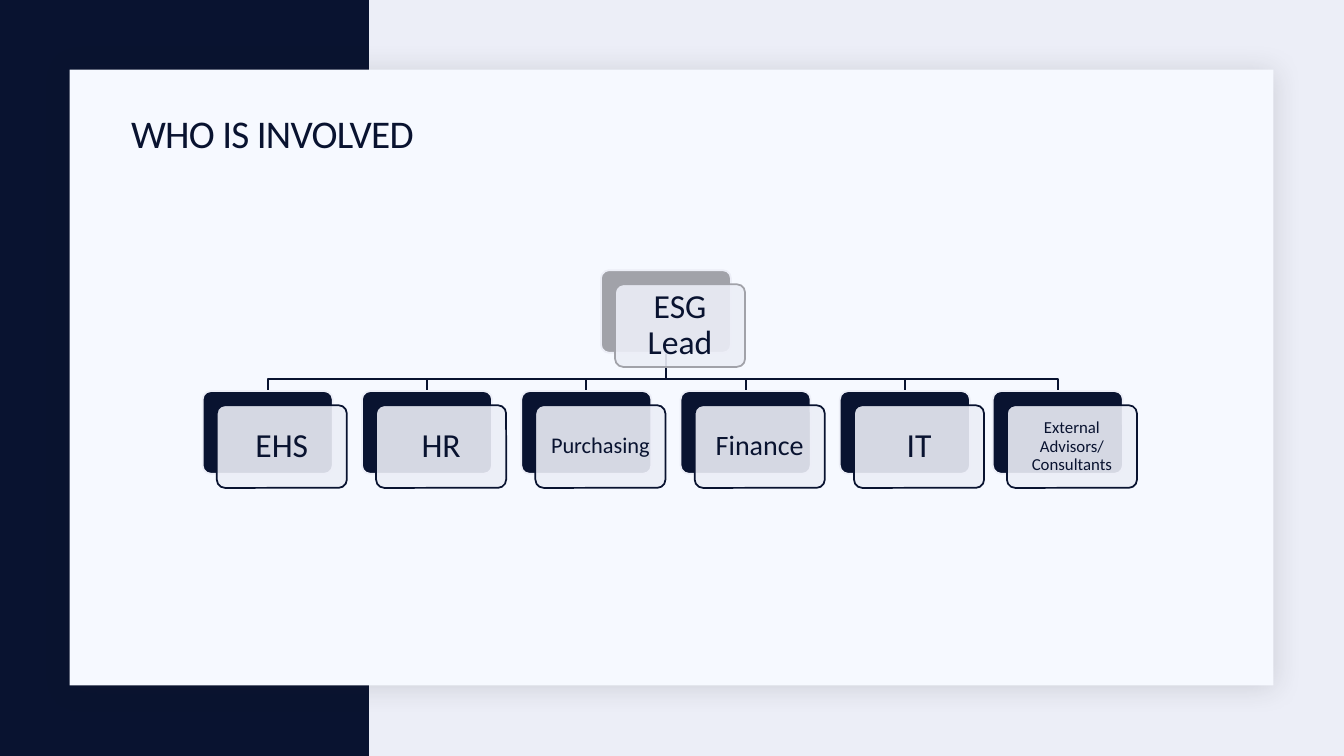
from dataclasses import dataclass

from lxml.etree import SubElement
from pptx import Presentation
from pptx.dml.color import RGBColor
from pptx.enum.shapes import MSO_SHAPE as Preset
from pptx.enum.text import MSO_ANCHOR as Anchor, MSO_AUTO_SIZE as AutoSize, PP_ALIGN as Align
from pptx.oxml.ns import qn
from pptx.util import Inches, Pt


@dataclass(frozen=True)
class Theme:
    font: str = "Calibri"
    navy: str = "091330"
    pale: str = "ECEEF7"
    panel: str = "F6F9FF"
    grey: str = "A1A2A9"
    shadow: str = "1F2125"
    title: float = 28
    large: float = 24
    medium: float = 20
    small: float = 16
    tiny: float = 12
    line: float = 1.25


@dataclass(frozen=True)
class Box:
    left: float
    top: float
    width: float
    height: float

    def emu(self) -> tuple:
        return tuple(Inches(v) for v in (self.left, self.top, self.width, self.height))

    def shifted(self, step: float) -> "Box":
        return Box(self.left + step, self.top + step, self.width, self.height)

    @property
    def center(self) -> float:
        return self.left + self.width / 2


@dataclass(frozen=True)
class Grid:
    left: float = 2.01
    top: float = 2.68
    column: float = 1.58
    row: float = 1.2
    card_width: float = 1.29
    card_height: float = 0.82
    offset: float = 0.14

    def cell(self, col: float, row: float) -> Box:
        return Box(self.left + col * self.column, self.top + row * self.row,
                   self.card_width, self.card_height)


@dataclass(frozen=True)
class Role:
    text: str
    col: float
    row: float
    size: float
    inset: float
    color: str


THEME = Theme()
GRID = Grid()
WIDTH, HEIGHT = 13.33, 7.5
BAND = Box(0, 0, 3.66, HEIGHT)
PANEL = Box(0.69, 0.69, 11.94, 6.11)
TITLE = Box(1.2, 1.03, 11, 0.64)

LEAD = Role("ESG Lead", 2.5, 0, THEME.large, 0.12, THEME.grey)
TEAM = [
    Role("EHS", 0, 1, THEME.large, 0.12, THEME.navy),
    Role("HR", 1, 1, THEME.large, 0.12, THEME.navy),
    Role("Purchasing", 2, 1, THEME.small, 0.09, THEME.navy),
    Role("Finance", 3, 1, THEME.medium, 0.1, THEME.navy),
    Role("IT", 4, 1, THEME.large, 0.12, THEME.navy),
    Role("External Advisors/ Consultants", 4.96, 1, THEME.tiny, 0.07, THEME.navy),
]


def rgb(color: str) -> RGBColor:
    return RGBColor.from_string(color)


def add_block(shapes, preset, box: Box, fill: str, line: str = ""):
    sp = shapes.add_shape(preset, *box.emu())
    sp.shadow.inherit = False
    sp.fill.solid()
    sp.fill.fore_color.rgb = rgb(fill)
    if line:
        sp.line.color.rgb = rgb(line)
        sp.line.width = Pt(THEME.line)
    else:
        sp.line.fill.background()
    return sp


def add_alpha(color_element, percent: int) -> None:
    SubElement(color_element, qn("a:alpha"), val=str(percent * 1000))


def add_soft_shadow(sp) -> None:
    effects = sp._element.spPr.find(qn("a:effectLst"))
    shadow = SubElement(effects, qn("a:outerShdw"), blurRad=str(Pt(20)), dist=str(Pt(2)),
                        dir=str(45 * 60000), algn="tl", rotWithShape="0")
    add_alpha(SubElement(shadow, qn("a:srgbClr"), val=THEME.shadow), 15)


def write(tf, text: str, size: float, align) -> None:
    tf.word_wrap = True
    tf.auto_size = AutoSize.NONE
    tf.vertical_anchor = Anchor.MIDDLE
    p = tf.paragraphs[0]
    p.text = text
    p.alignment = align
    p.line_spacing = 0.9
    p.font.name = THEME.font
    p.font.size = Pt(size)
    p.font.color.rgb = rgb(THEME.navy)


def add_title(slide) -> None:
    title = slide.shapes.title
    title.left, title.top, title.width, title.height = TITLE.emu()
    write(title.text_frame, "WHO IS INVOLVED", THEME.title, Align.LEFT)
    title.text_frame.paragraphs[0].runs[0].font._element.set("spc", "-50")
    slide.shapes._spTree.append(title._element)


def add_branch(shapes, parent: Box, child: Box) -> None:
    start = parent.top + parent.height
    bend = start + (child.top - start) * 0.68
    points = [(parent.center, bend), (child.center, bend), (child.center, child.top)]
    builder = shapes.build_freeform(Inches(parent.center), Inches(start))
    builder.add_line_segments([(Inches(x), Inches(y)) for x, y in points], close=False)
    sp = builder.convert_to_shape()
    sp.shadow.inherit = False
    sp.fill.background()
    sp.line.color.rgb = rgb(THEME.navy)
    sp.line.width = Pt(THEME.line)


def add_card(shapes, role: Role) -> None:
    box = GRID.cell(role.col, role.row)
    back = add_block(shapes, Preset.ROUNDED_RECTANGLE, box, role.color, THEME.pale)
    front = add_block(shapes, Preset.ROUNDED_RECTANGLE, box.shifted(GRID.offset),
                      THEME.pale, role.color)
    back.adjustments[0] = front.adjustments[0] = 0.1
    add_alpha(front._element.spPr.find(qn("a:solidFill"))[0], 90)
    tf = front.text_frame
    tf.margin_left = tf.margin_right = tf.margin_top = tf.margin_bottom = Inches(role.inset)
    write(tf, role.text, role.size, Align.CENTER)


def main() -> None:
    prs = Presentation()
    prs.slide_width, prs.slide_height = Inches(WIDTH), Inches(HEIGHT)
    slide = prs.slides.add_slide(prs.slide_layouts.get_by_name("Title Only"))
    slide.background.fill.solid()
    slide.background.fill.fore_color.rgb = rgb(THEME.pale)
    add_block(slide.shapes, Preset.RECTANGLE, BAND, THEME.navy)
    add_soft_shadow(add_block(slide.shapes, Preset.RECTANGLE, PANEL, THEME.panel))
    add_title(slide)
    for role in TEAM:
        add_branch(slide.shapes, GRID.cell(LEAD.col, LEAD.row), GRID.cell(role.col, role.row))
    for role in [LEAD, *TEAM]:
        add_card(slide.shapes, role)
    prs.save("out.pptx")


if __name__ == "__main__":
    main()
